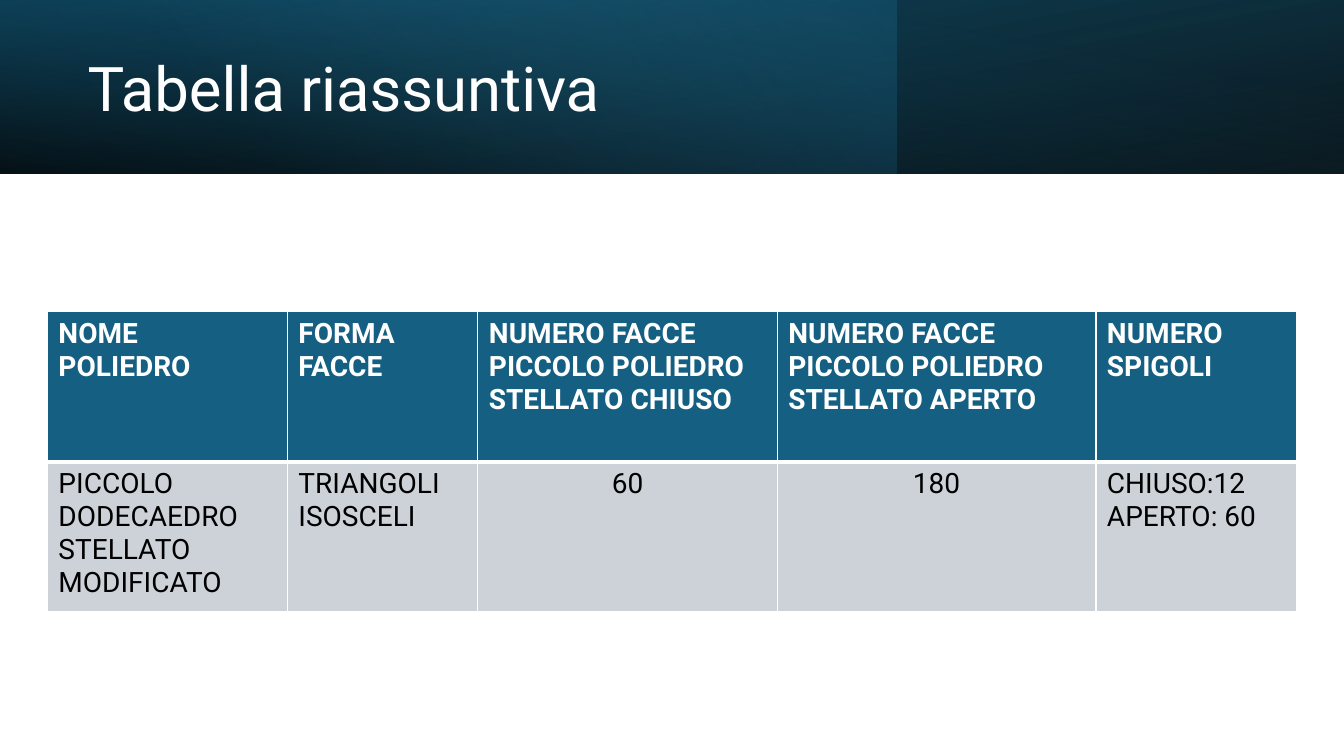
from dataclasses import dataclass

import lxml.etree
import pptx
import pptx.dml.color
import pptx.enum.dml
import pptx.enum.shapes
import pptx.enum.text
import pptx.oxml.ns
import pptx.util

RGB = pptx.dml.color.RGBColor
Inches = pptx.util.Inches
Pt = pptx.util.Pt
Align = pptx.enum.text.PP_ALIGN
qn = pptx.oxml.ns.qn

BLACK = RGB(0x00, 0x00, 0x00)
WHITE = RGB(0xFF, 0xFF, 0xFF)
NAVY = RGB(0x10, 0x48, 0x62)
TEAL = RGB(0x15, 0x60, 0x82)
SKY = RGB(0x46, 0xB1, 0xE1)
PALE_GREY = RGB(0xCC, 0xD2, 0xD8)

FONT = "Roboto"
SLIDE_WIDTH, SLIDE_HEIGHT = 13.33, 7.5
BANNER_HEIGHT = 1.72
ROW_HEIGHT = 1.49
COLUMN_WIDTHS = (2.38, 1.89, 2.97, 3.16, 1.99)


@dataclass(frozen=True)
class Stop:
    position: float
    color: RGB
    opacity: int  # percent


@dataclass(frozen=True)
class BannerLayer:
    width: float
    angle: int  # clockwise degrees
    stops: tuple[Stop, Stop]
    rotation: int = 0
    flipped: bool = False


@dataclass(frozen=True)
class RowStyle:
    fill: RGB
    color: RGB
    bold: bool
    borders: dict[str, int]  # side to width in points


BANNER_LAYERS = (
    BannerLayer(SLIDE_WIDTH, 100, (Stop(0, BLACK, 96), Stop(1, NAVY, 100)), 180, True),
    BannerLayer(8.89, 140, (Stop(0, TEAL, 41), Stop(0.74, SKY, 0))),
    BannerLayer(SLIDE_WIDTH, 260, (Stop(0, BLACK, 63), Stop(0.78, TEAL, 15)), 0, True),
)
HEADER = RowStyle(TEAL, WHITE, True, {"L": 1, "R": 1, "T": 1, "B": 3})
BODY = RowStyle(PALE_GREY, BLACK, False, {"L": 1, "R": 1, "T": 3, "B": 1})
SUMMARY = (
    (HEADER, (
        "NOME POLIEDRO",
        "FORMA FACCE",
        "NUMERO FACCE\nPICCOLO POLIEDRO STELLATO CHIUSO",
        "NUMERO FACCE PICCOLO POLIEDRO STELLATO APERTO",
        "NUMERO SPIGOLI",
    )),
    (BODY, (
        "PICCOLO DODECAEDRO STELLATO MODIFICATO",
        "TRIANGOLI ISOSCELI",
        "60",
        "180",
        "CHIUSO:12\nAPERTO: 60",
    )),
)
CELL_MARGINS = {
    "margin_left": Inches(0.11),
    "margin_right": Inches(0.11),
    "margin_top": Inches(0.06),
    "margin_bottom": Inches(0.06),
}


def apply_format(target: object, values: dict[str, object]) -> None:
    for name, value in values.items():
        setattr(target, name, value)


def draw_layer(slide: pptx.slide.Slide, layer: BannerLayer) -> None:
    band = slide.shapes.add_shape(
        pptx.enum.shapes.MSO_SHAPE.RECTANGLE,
        0, 0, Inches(layer.width), Inches(BANNER_HEIGHT),
    )
    band.shadow.inherit = False
    band.line.fill.background()
    band.rotation = layer.rotation
    properties = band._element.spPr
    if layer.flipped:
        properties.find(qn("a:xfrm")).set("flipH", "1")
    band.fill.gradient()
    band.fill.gradient_angle = 360 - layer.angle
    for gradient_stop, stop in zip(band.fill.gradient_stops, layer.stops):
        gradient_stop.position = stop.position
        gradient_stop.color.rgb = stop.color
    for color, stop in zip(properties.iter(qn("a:srgbClr")), layer.stops):
        alpha = lxml.etree.SubElement(color, qn("a:alpha"))
        alpha.set("val", str(stop.opacity * 1000))


def draw_borders(cell: pptx.table._Cell, borders: dict[str, int]) -> None:
    properties = cell._tc.get_or_add_tcPr()
    for side, width in borders.items():
        line = lxml.etree.SubElement(properties, qn(f"a:ln{side}"), w=str(Pt(width)))
        fill = lxml.etree.SubElement(line, qn("a:solidFill"))
        lxml.etree.SubElement(fill, qn("a:srgbClr"), val=str(WHITE))


def fill_cell(cell: pptx.table._Cell, text: str, style: RowStyle) -> None:
    draw_borders(cell, style.borders)
    cell.fill.solid()
    cell.fill.fore_color.rgb = style.fill
    apply_format(cell, CELL_MARGINS)
    cell.text = text
    for paragraph in cell.text_frame.paragraphs:
        paragraph.alignment = Align.CENTER if text.isdigit() else Align.LEFT
        for run in paragraph.runs:
            apply_format(run.font, {"name": FONT, "size": Pt(20), "bold": style.bold})
            run.font.color.rgb = style.color


def draw_title(slide: pptx.slide.Slide, text: str) -> None:
    title = slide.shapes.add_textbox(Inches(0.77), Inches(0.27), Inches(7.72), Inches(1.27))
    frame = title.text_frame
    apply_format(frame, {
        "word_wrap": True,
        "vertical_anchor": pptx.enum.text.MSO_ANCHOR.MIDDLE,
    })
    paragraph = frame.paragraphs[0]
    apply_format(paragraph, {"line_spacing": 0.9, "space_after": Pt(6)})
    run = paragraph.add_run()
    run.text = text
    apply_format(run.font, {"name": FONT, "size": Pt(44)})
    run.font.color.rgb = WHITE


def draw_summary(slide: pptx.slide.Slide) -> None:
    table = slide.shapes.add_table(
        len(SUMMARY), len(COLUMN_WIDTHS), Inches(0.47), Inches(3.09),
        Inches(sum(COLUMN_WIDTHS)), Inches(ROW_HEIGHT * len(SUMMARY)),
    ).table
    table.horz_banding = False
    for column, width in zip(table.columns, COLUMN_WIDTHS):
        column.width = Inches(width)
    for row, (style, texts) in zip(table.rows, SUMMARY):
        row.height = Inches(ROW_HEIGHT)
        for cell, text in zip(row.cells, texts):
            fill_cell(cell, text, style)


def main() -> None:
    presentation = pptx.Presentation()
    presentation.slide_width = Inches(SLIDE_WIDTH)
    presentation.slide_height = Inches(SLIDE_HEIGHT)
    slide = presentation.slides.add_slide(presentation.slide_layouts[6])

    # Banner and title
    for layer in BANNER_LAYERS:
        draw_layer(slide, layer)
    draw_title(slide, "Tabella riassuntiva")

    # Summary table
    draw_summary(slide)

    presentation.save("out.pptx")


if __name__ == "__main__":
    main()
